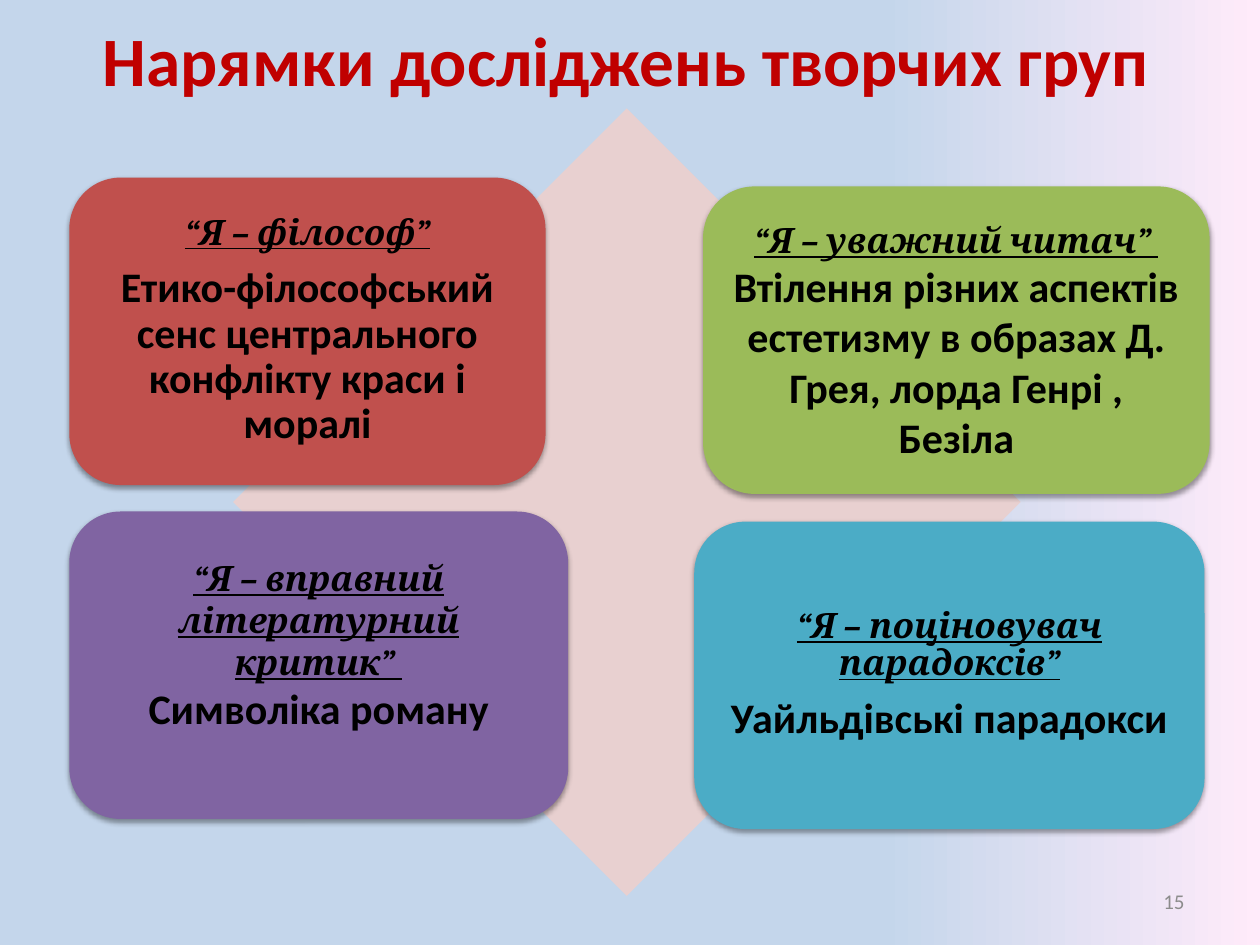
from lxml import etree
from pptx import Presentation
from pptx.dml.color import RGBColor
from pptx.enum.shapes import MSO_SHAPE
from pptx.enum.text import MSO_ANCHOR, PP_ALIGN
from pptx.oxml.ns import qn
from pptx.util import Inches, Pt

DIAMOND, ROUNDED = MSO_SHAPE.DIAMOND, MSO_SHAPE.ROUNDED_RECTANGLE
MIDDLE = MSO_ANCHOR.MIDDLE
CENTER, RIGHT = PP_ALIGN.CENTER, PP_ALIGN.RIGHT

COLORS = {
    "sky": "C4D6EB", "pink": "FFEBFA", "title": "C00000", "diamond": "E8D0D0",
    "red": "C0504D", "green": "9BBB59", "purple": "8064A2", "teal": "4BACC6",
    "black": "000000", "number": "8C8C8C",
}


def write(para, text, size, color="black", font="Calibri", align=CENTER,
          bold=True, slanted=False, spacing=1.0, after=0):
    """Add one run; slanted text is both italic and underlined."""
    para.alignment = align
    para.line_spacing = spacing
    para.space_after = Pt(after)
    span = para.add_run()
    span.text = text
    span.font.name = font
    span.font.size = Pt(size)
    span.font.bold = bold
    span.font.italic = slanted
    span.font.underline = slanted
    span.font.color.rgb = RGBColor.from_string(COLORS[color])


def add_filled(shapes, kind, left, top, width, height, color):
    shape = shapes.add_shape(kind, Inches(left), Inches(top), Inches(width), Inches(height))
    shape.shadow.inherit = False
    shape.fill.solid()
    shape.fill.fore_color.rgb = RGBColor.from_string(COLORS[color])
    shape.line.fill.background()
    return shape


deck = Presentation()
deck.slide_width, deck.slide_height = Inches(10), Inches(7.5)
page = deck.slides.add_slide(deck.slide_layouts[6])

background = page.background.fill
background.gradient()
background.gradient_angle = 0
for stop, position, color in zip(background.gradient_stops, (0.7, 1.0), ("sky", "pink")):
    stop.position = position
    stop.color.rgb = RGBColor.from_string(COLORS[color])

# Title and slide number
labels = [
    ((0.47, 0.23, 9, 0.48), "Нарямки досліджень творчих груп",
     dict(size=39.6, color="title")),
    ((7.17, 6.95, 2.33, 0.4), "15",
     dict(size=12, color="number", align=RIGHT, bold=False)),
]
for place, text, style in labels:
    box = page.shapes.add_textbox(*map(Inches, place))
    box.text_frame.word_wrap = True
    box.text_frame.vertical_anchor = MIDDLE
    write(box.text_frame.paragraphs[0], text, **style)

add_filled(page.shapes, DIAMOND, 1.85, 0.86, 6.25, 6.25, "diamond")

# Group cards: left, top, width, colour, heading, topic, line spacing,
# gap after heading in points, bottom inset
CARD_HEIGHT = 2.44
cards = [
    (0.55, 1.41, 3.78, "red", "“Я – філософ”",
     "Етико-філософський сенс центрального конфлікту краси і моралі", 0.9, 8, 0.08),
    (5.58, 1.48, 4.02, "green", "“Я – уважний читач” ",
     "Втілення різних аспектів естетизму в образах Д. Грея, лорда Генрі , Безіла",
     1.0, 0, 0.08),
    (0.55, 4.06, 3.96, "purple", "“Я – вправний літературний критик” ",
     "Символіка роману", 1.0, 0, 0.41),
    (5.51, 4.14, 4.05, "teal", "“Я – поціновувач парадоксів”",
     "Уайльдівські парадокси", 0.9, 8, 0.08),
]
for left, top, width, color, heading, topic, spacing, gap, bottom in cards:
    card = add_filled(page.shapes, ROUNDED, left, top, width, CARD_HEIGHT, color)

    effects = card._element.spPr.find(qn("a:effectLst"))
    shadow = etree.SubElement(effects, qn("a:outerShdw"), blurRad=str(Pt(3.1)),
                              dist=str(Pt(1.6)), dir="5400000", rotWithShape="0")
    shade = etree.SubElement(shadow, qn("a:srgbClr"), val=COLORS["black"])
    etree.SubElement(shade, qn("a:alpha"), val="38000")

    frame = card.text_frame
    frame.word_wrap = True
    frame.vertical_anchor = MIDDLE
    frame.margin_left = frame.margin_right = Inches(0.1)
    frame.margin_top, frame.margin_bottom = Inches(0.08), Inches(bottom)
    write(frame.paragraphs[0], heading, size=20, font="Cambria", slanted=True,
          spacing=spacing, after=gap)
    write(frame.add_paragraph(), topic, size=24, spacing=spacing)

deck.save("out.pptx")
